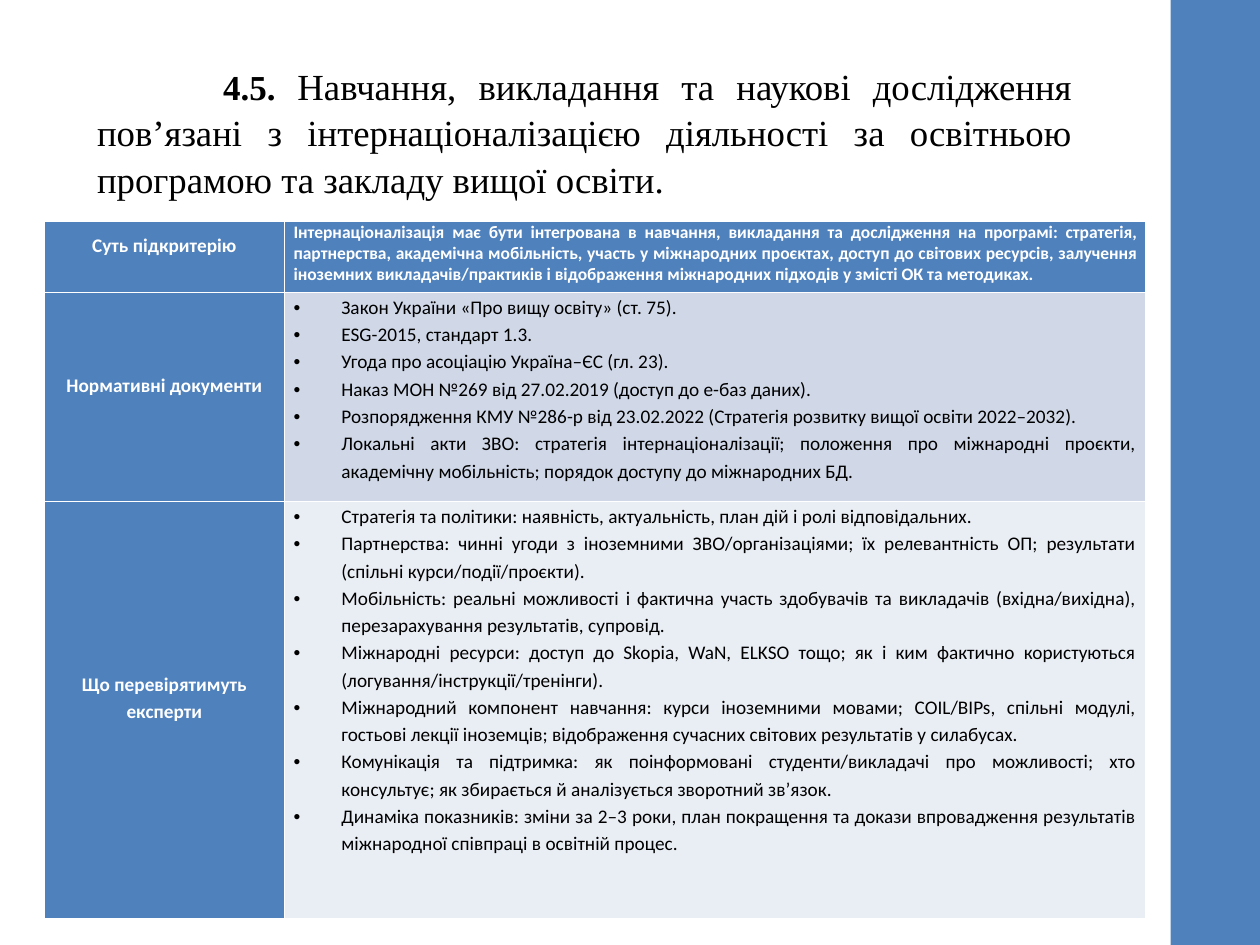
from lxml.etree import SubElement
from pptx import Presentation
from pptx.dml.color import RGBColor
from pptx.enum.shapes import MSO_SHAPE as Shape
from pptx.enum.text import MSO_ANCHOR as Anchor, MSO_AUTO_SIZE as AutoSize, PP_ALIGN as Align
from pptx.oxml.ns import qn
from pptx.util import Inches, Pt

BLUE, WHITE, BLACK = "4F81BD", "FFFFFF", "000000"


def paint(fill, color):
    fill.solid()
    fill.fore_color.rgb = RGBColor.from_string(color)


def style(para, align, size, color, bold, spacing, name="Calibri"):
    para.alignment = align
    para.line_spacing = spacing
    para.font.name = name
    para.font.size = Pt(size)
    para.font.bold = bold
    para.font.color.rgb = RGBColor.from_string(color)


deck = Presentation()
deck.slide_width, deck.slide_height = Inches(10), Inches(7.5)
page = deck.slides.add_slide(deck.slide_layouts[5])

# Title: justified, first line indented
title = page.shapes.title
title.left, title.top = Inches(0.67), Inches(0.44)
title.width, title.height = Inches(7.94), Inches(1.34)
frame = title.text_frame
frame.word_wrap = True
frame.auto_size = AutoSize.NONE
frame.vertical_anchor = Anchor.TOP
para = frame.paragraphs[0]
number = para.add_run()
number.text = "4.5. "
para.add_run().text = (
    "Навчання, викладання та наукові дослідження повʼязані з інтернаціоналізацією "
    "діяльності за освітньою програмою та закладу вищої освіти."
)
para._p.get_or_add_pPr().set("indent", str(Inches(1)))
style(para, Align.JUSTIFY, 21, BLACK, False, 1.05, "Times New Roman")
number.font.bold = True
number.font.size = Pt(20)

# Side bar
bar = page.shapes.add_shape(Shape.RECTANGLE, Inches(9.29), 0, Inches(0.71), Inches(7.5))
bar.shadow.inherit = False
paint(bar.fill, BLUE)
bar.line.fill.background()

# Table content: label, row height, fill, paragraphs
rows = [
    ("Суть підкритерію", 0.56, BLUE, [
        "Інтернаціоналізація має бути інтегрована в навчання, викладання та дослідження на "
        "програмі: стратегія, партнерства, академічна мобільність, участь у міжнародних "
        "проєктах, доступ до світових ресурсів, залучення іноземних викладачів/практиків "
        "і відображення міжнародних підходів у змісті ОК та методиках.",
    ]),
    ("Нормативні документи", 1.66, "D0D8E8", [
        "Закон України «Про вищу освіту» (ст. 75).",
        "ESG-2015, стандарт 1.3.",
        "Угода про асоціацію Україна–ЄС (гл. 23).",
        "Наказ МОН №269 від 27.02.2019 (доступ до е-баз даних).",
        "Розпорядження КМУ №286-р від 23.02.2022 (Стратегія розвитку вищої освіти 2022–2032).",
        "Локальні акти ЗВО: стратегія інтернаціоналізації; положення про міжнародні проєкти, "
        "академічну мобільність; порядок доступу до міжнародних БД.",
    ]),
    ("Що перевірятимуть експерти", 3.31, "E9EDF4", [
        "Стратегія та політики: наявність, актуальність, план дій і ролі відповідальних.",
        "Партнерства: чинні угоди з іноземними ЗВО/організаціями; їх релевантність ОП; "
        "результати (спільні курси/події/проєкти).",
        "Мобільність: реальні можливості і фактична участь здобувачів та викладачів "
        "(вхідна/вихідна), перезарахування результатів, супровід.",
        "Міжнародні ресурси: доступ до Skopia, WaN, ELKSO тощо; як і ким фактично "
        "користуються (логування/інструкції/тренінги).",
        "Міжнародний компонент навчання: курси іноземними мовами; COIL/BIPs, спільні модулі, "
        "гостьові лекції іноземців; відображення сучасних світових результатів у силабусах.",
        "Комунікація та підтримка: як поінформовані студенти/викладачі про можливості; хто "
        "консультує; як збирається й аналізується зворотний зв’язок.",
        "Динаміка показників: зміни за 2–3 роки, план покращення та докази впровадження "
        "результатів міжнародної співпраці в освітній процес.",
    ]),
]

table = page.shapes.add_table(
    len(rows), 2, Inches(0.35), Inches(1.76), Inches(8.74), Inches(5.53)
).table
table.first_col = True
table.columns[0].width, table.columns[1].width = Inches(1.91), Inches(6.83)

for index, (label, height, color, texts) in enumerate(rows):
    table.rows[index].height = Inches(height)
    label_cell, text_cell = table.cell(index, 0), table.cell(index, 1)
    for cell, fill in ((label_cell, BLUE), (text_cell, color)):
        paint(cell.fill, fill)
        cell.margin_left = cell.margin_right = Inches(0.07)
        cell.margin_top = cell.margin_bottom = 0

    # Label sits half a line above the middle
    label_cell.vertical_anchor = Anchor.MIDDLE
    label_cell.margin_bottom = Inches(0.21)
    label_cell.text = label
    style(label_cell.text_frame.paragraphs[0], Align.CENTER, 11, WHITE, True, 1.15)

    # Header text is plain, the other rows are bulleted lists
    text_cell.text = "\n".join(texts)
    for para in text_cell.text_frame.paragraphs:
        if index == 0:
            style(para, Align.JUSTIFY, 10, WHITE, True, 1.0)
            continue
        props = para._p.get_or_add_pPr()
        props.set("marL", str(Inches(0.38)))
        props.set("indent", str(-Inches(0.38)))
        SubElement(props, qn("a:buFont"), typeface="Arial")
        SubElement(props, qn("a:buChar"), char="•")
        style(para, Align.JUSTIFY, 11, BLACK, False, 1.15)

deck.save("out.pptx")
